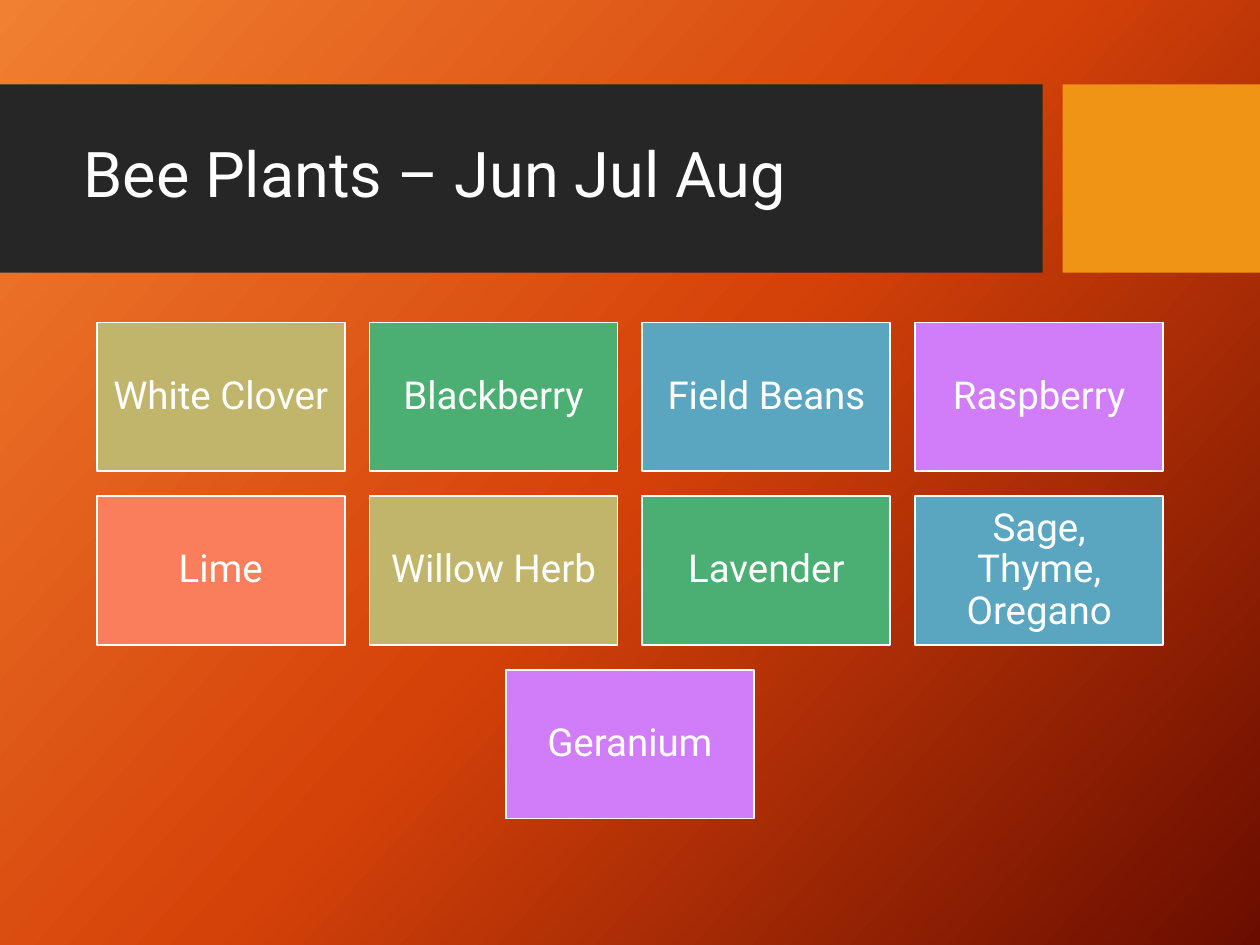
from copy import deepcopy
from dataclasses import dataclass

from pptx import Presentation
from pptx.dml.color import RGBColor
from pptx.enum.shapes import MSO_SHAPE
from pptx.enum.text import MSO_ANCHOR, PP_ALIGN
from pptx.slide import Slide
from pptx.text.text import TextFrame
from pptx.util import Cm, Pt

RECTANGLE = MSO_SHAPE.RECTANGLE
MIDDLE = MSO_ANCHOR.MIDDLE
LEFT, CENTER = PP_ALIGN.LEFT, PP_ALIGN.CENTER

FONT = "Roboto"
WHITE = "FFFFFF"
SLIDE_WIDTH, SLIDE_HEIGHT = 25.4, 19.05
BAND_TOP, BAND_HEIGHT = 1.7, 3.8
TILE_WIDTH, TILE_HEIGHT, TILE_GAP = 5.0, 3.0, 0.5
TILES_TOP, COLUMNS = 6.5, 4
TILE_COLORS = ["C1B56B", "4BAF73", "5AA6C0", "D17DF9", "FA7E5C"]
PLANTS = [
    "White Clover", "Blackberry", "Field Beans", "Raspberry",
    "Lime", "Willow Herb", "Lavender", "Sage, Thyme, Oregano",
    "Geranium",
]
BACKGROUND_STOPS = [(0, "F18031"), (0.5, "D54209"), (1, "6A0D00")]


@dataclass
class Box:
    left: float
    top: float
    width: float
    height: float
    fill: str
    label: str = ""
    line: str = ""


def color(value: str) -> RGBColor:
    return RGBColor.from_string(value)


def write(frame: TextFrame, text: str, size: float, align: PP_ALIGN) -> None:
    frame.text = text
    frame.word_wrap = True
    frame.vertical_anchor = MIDDLE
    paragraph = frame.paragraphs[0]
    paragraph.alignment = align
    paragraph.line_spacing = 0.9
    font = paragraph.runs[0].font
    font.name, font.size = FONT, Pt(size)
    font.color.rgb = color(WHITE)


def draw_box(slide: Slide, box: Box) -> None:
    shape = slide.shapes.add_shape(
        RECTANGLE, Cm(box.left), Cm(box.top), Cm(box.width), Cm(box.height))
    shape.shadow.inherit = False
    shape.fill.solid()
    shape.fill.fore_color.rgb = color(box.fill)
    if box.line:
        shape.line.color.rgb = color(box.line)
        shape.line.width = Pt(1)
    else:
        shape.line.fill.background()
    if box.label:
        frame = shape.text_frame
        frame.margin_left = frame.margin_right = Cm(0.23)
        frame.margin_top = frame.margin_bottom = Cm(0.23)
        write(frame, box.label, 22, CENTER)


def paint_background(slide: Slide) -> None:
    fill = slide.background.fill
    fill.gradient()
    fill.gradient_angle = 360 - 42
    stop_list = slide.element.xpath(".//a:gsLst")[0]
    stop_list.append(deepcopy(stop_list[-1]))
    for stop, (position, value) in zip(fill.gradient_stops, BACKGROUND_STOPS):
        stop.position = position
        stop.color.rgb = color(value)


def draw_header(slide: Slide) -> None:
    draw_box(slide, Box(0, BAND_TOP, 21.02, BAND_HEIGHT, "262626"))
    draw_box(slide, Box(21.42, BAND_TOP, SLIDE_WIDTH - 21.42, BAND_HEIGHT, "F09415"))
    title = slide.shapes.title
    title.left, title.top, title.width, title.height = Cm(1.43), Cm(2.08), Cm(20.03), Cm(3)
    write(title.text_frame, "Bee Plants – Jun Jul Aug", 36, LEFT)
    title.element.getparent().append(title.element)


def draw_plants(slide: Slide) -> None:
    for index, plant in enumerate(PLANTS):
        row, column = divmod(index, COLUMNS)
        in_row = min(COLUMNS, len(PLANTS) - row * COLUMNS)
        row_width = in_row * (TILE_WIDTH + TILE_GAP) - TILE_GAP
        left = (SLIDE_WIDTH - row_width) / 2 + column * (TILE_WIDTH + TILE_GAP)
        top = TILES_TOP + row * (TILE_HEIGHT + TILE_GAP)
        fill = TILE_COLORS[index % len(TILE_COLORS)]
        draw_box(slide, Box(left, top, TILE_WIDTH, TILE_HEIGHT, fill, plant, WHITE))


def main() -> None:
    """Build the slide of summer bee plants."""
    deck = Presentation()
    deck.slide_width, deck.slide_height = Cm(SLIDE_WIDTH), Cm(SLIDE_HEIGHT)
    slide = deck.slides.add_slide(deck.slide_layouts[5])
    paint_background(slide)
    draw_header(slide)
    draw_plants(slide)
    deck.save("out.pptx")


if __name__ == "__main__":
    main()
